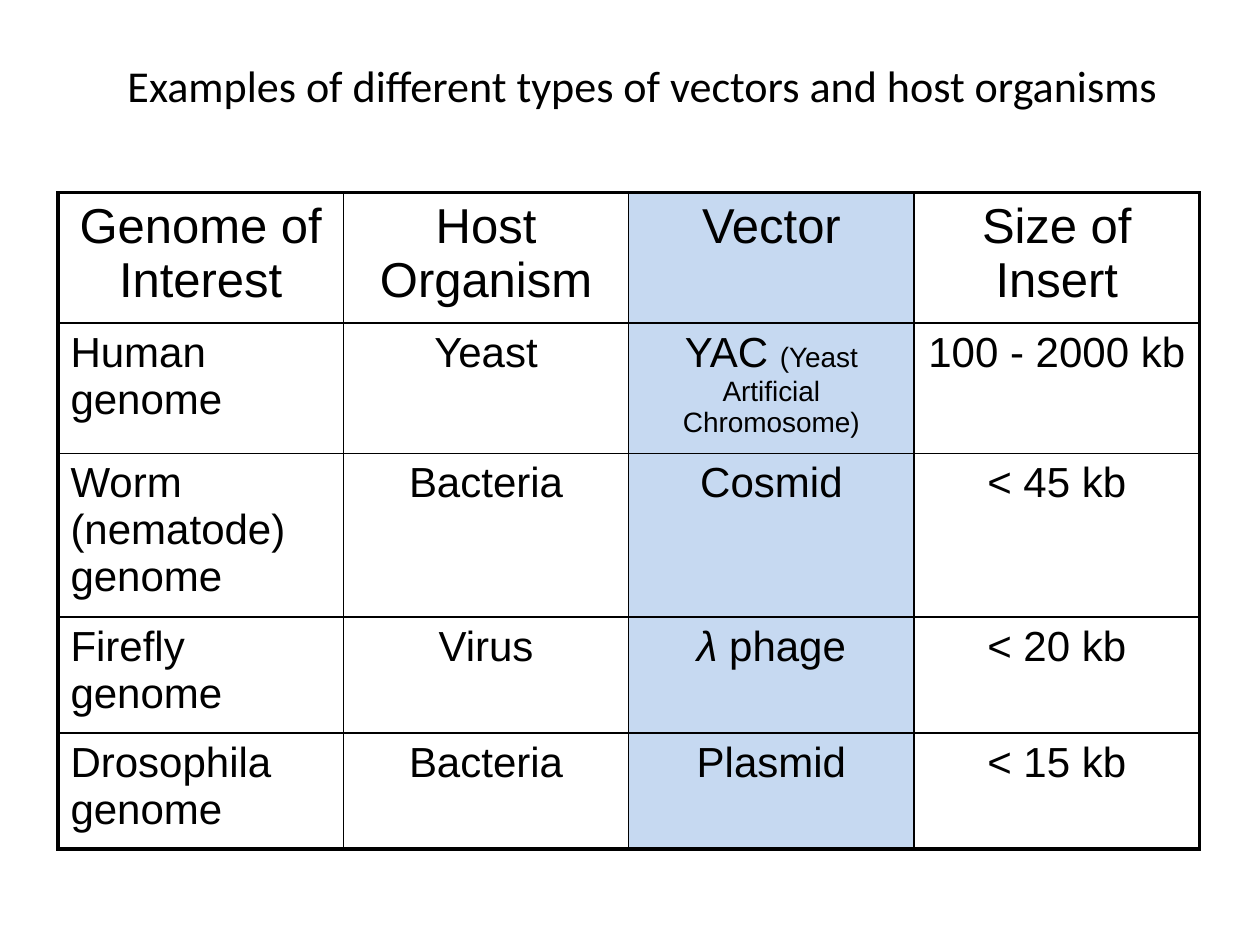
import dataclasses

import lxml.etree
import pptx
import pptx.dml.color
import pptx.enum.text
import pptx.oxml.ns
import pptx.util


@dataclasses.dataclass(frozen=True)
class Theme:
    ink: str = "000000"
    highlight: str = "C6D9F1"
    title_font: str = "Calibri"
    table_font: str = "Arial"
    title_size: float = 25.2
    header_size: float = 28
    body_size: float = 24
    note_size: float = 16
    frame_width: float = 2.25
    rule_width: float = 1


THEME = Theme()
SLIDE_WIDTH, SLIDE_HEIGHT = pptx.util.Inches(10), pptx.util.Inches(7.5)
VECTOR_COLUMN = 2
COLUMN_SHARE = 0.2265
SHORT_ROW, TALL_ROW = 0.92, 1.3
ROW_HEIGHTS = [SHORT_ROW, SHORT_ROW, TALL_ROW, SHORT_ROW, SHORT_ROW]

TITLE = "Examples of different types of vectors and host organisms"
HEADINGS = ["Genome of Interest", "Host Organism", "Vector", "Size of Insert"]
# A cell is a string, or a list of (text, font format) runs.
GENOMES = [
    ["Human genome", "Yeast",
     [("YAC ", {}), ("(Yeast Artificial Chromosome)",
                     {"size": pptx.util.Pt(THEME.note_size)})],
     "100 - 2000 kb"],
    ["Worm (nematode) genome", "Bacteria", "Cosmid", "< 45 kb"],
    ["Firefly genome", "Virus",
     [("λ", {"italic": True}), (" phage", {})], "< 20 kb"],
    ["Drosophila genome", "Bacteria", "Plasmid", "< 15 kb"],
]


def rgb(color):
    return pptx.dml.color.RGBColor.from_string(color)


def apply_format(target, values):
    for attribute, value in values.items():
        setattr(target, attribute, value)


def write_text(frame, content, font, size, centered=True):
    """Fill the first paragraph with a string or a list of formatted runs."""
    paragraph = frame.paragraphs[0]
    align = pptx.enum.text.PP_ALIGN
    paragraph.alignment = align.CENTER if centered else align.LEFT
    runs = [(content, {})] if isinstance(content, str) else content
    for text, changes in runs:
        run = paragraph.add_run()
        run.text = text
        base = {"name": font, "size": pptx.util.Pt(size)}
        apply_format(run.font, {**base, **changes})
        run.font.color.rgb = rgb(THEME.ink)


def add_title(slide):
    title = slide.shapes.add_textbox(
        int(0.085 * SLIDE_WIDTH), int(0.035 * SLIDE_HEIGHT),
        int(0.85 * SLIDE_WIDTH), int(0.11 * SLIDE_HEIGHT))
    apply_format(title.text_frame, {
        "word_wrap": True,
        "vertical_anchor": pptx.enum.text.MSO_ANCHOR.MIDDLE,
    })
    write_text(title.text_frame, TITLE, THEME.title_font, THEME.title_size)


def draw_borders(cell, outer_sides):
    """Rule all four sides, heavier where the cell meets the table frame."""
    qn = pptx.oxml.ns.qn
    properties = cell._tc.get_or_add_tcPr()
    for side in "LRTB":
        width = THEME.frame_width if side in outer_sides else THEME.rule_width
        line = lxml.etree.SubElement(
            properties, qn(f"a:ln{side}"), w=str(pptx.util.Pt(width)))
        fill = lxml.etree.SubElement(line, qn("a:solidFill"))
        lxml.etree.SubElement(fill, qn("a:srgbClr"), val=THEME.ink)


def fill_cell(cell, column):
    if column == VECTOR_COLUMN:
        cell.fill.solid()
        cell.fill.fore_color.rgb = rgb(THEME.highlight)
    else:
        cell.fill.background()


def add_vector_table(slide):
    rows = [HEADINGS] + GENOMES
    last_row, last_column = len(rows) - 1, len(HEADINGS) - 1
    column_width = int(COLUMN_SHARE * SLIDE_WIDTH)
    table = slide.shapes.add_table(
        len(rows), len(HEADINGS),
        int(0.046 * SLIDE_WIDTH), int(0.204 * SLIDE_HEIGHT),
        column_width * len(HEADINGS),
        pptx.util.Inches(sum(ROW_HEIGHTS))).table
    apply_format(table, {"first_row": False, "horz_banding": False})
    for column in table.columns:
        column.width = column_width
    for row, height in zip(table.rows, ROW_HEIGHTS):
        row.height = pptx.util.Inches(height)

    for r, contents in enumerate(rows):
        for c, content in enumerate(contents):
            cell = table.cell(r, c)
            is_heading = r == 0
            write_text(cell.text_frame, content, THEME.table_font,
                       THEME.header_size if is_heading else THEME.body_size,
                       centered=is_heading or c > 0)
            edges = {"L": c == 0, "R": c == last_column,
                     "T": r == 0, "B": r == last_row}
            draw_borders(cell, [side for side in edges if edges[side]])
            fill_cell(cell, c)


def main():
    presentation = pptx.Presentation()
    apply_format(presentation, {"slide_width": SLIDE_WIDTH,
                                "slide_height": SLIDE_HEIGHT})
    slide = presentation.slides.add_slide(presentation.slide_layouts[6])
    add_title(slide)
    add_vector_table(slide)
    presentation.save("out.pptx")


if __name__ == "__main__":
    main()
